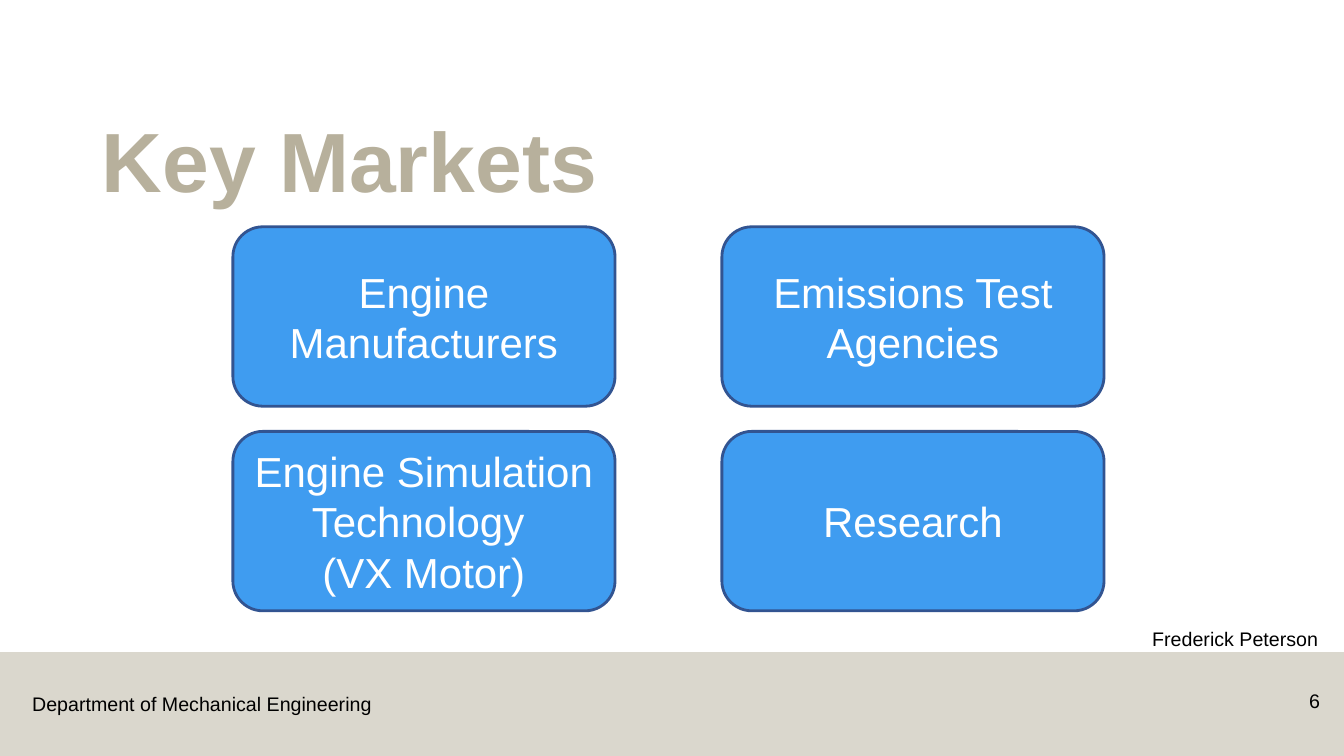
"""Build the Key Markets slide."""
from dataclasses import dataclass

from lxml.etree import SubElement
from pptx import Presentation
from pptx.dml.color import RGBColor
from pptx.enum.shapes import MSO_SHAPE
from pptx.enum.text import MSO_ANCHOR, MSO_AUTO_SIZE, PP_ALIGN
from pptx.oxml.ns import qn
from pptx.slide import Slide
from pptx.text.text import TextFrame
from pptx.util import Inches, Pt


@dataclass(frozen=True)
class Theme:
    font: str = "Arial"
    sand: str = "B7B09C"
    blue: str = "3F9CF0"
    navy: str = "325491"
    white: str = "FFFFFF"
    black: str = "000000"
    title_size: int = 60
    market_size: int = 30
    label_size: int = 14


@dataclass(frozen=True)
class Market:
    lines: tuple[str, ...]
    column: int
    row: int


@dataclass(frozen=True)
class Label:
    text: str
    left: float
    top: float
    width: float
    height: float
    align: PP_ALIGN = PP_ALIGN.LEFT


THEME = Theme()
MARKETS = (
    Market(("Engine Manufacturers",), 0, 0),
    Market(("Emissions Test Agencies",), 1, 0),
    Market(("Engine Simulation Technology ", "(VX Motor)"), 0, 1),
    Market(("Research",), 1, 1),
)
LABELS = (
    Label("Department of Mechanical Engineering", 0.22, 6.82, 3.59, 0.34),
    Label("6", 12.42, 6.79, 0.77, 0.4, PP_ALIGN.RIGHT),
    Label("Frederick Peterson", 11.33, 6.17, 2, 0.34),
)


def write_lines(tf: TextFrame, lines: tuple[str, ...], size: int, color: str,
                align: PP_ALIGN, bold: bool = False) -> None:
    tf.word_wrap = True
    for i, line in enumerate(lines):
        p = tf.add_paragraph() if i else tf.paragraphs[0]
        p.alignment = align
        r = p.add_run()
        r.text = line
        r.font.name = THEME.font
        r.font.size = Pt(size)
        r.font.bold = bold
        r.font.color.rgb = RGBColor.from_string(color)


def add_footer_band(s: Slide) -> None:
    sp = s.shapes.add_shape(MSO_SHAPE.RECTANGLE, 0, Inches(6.47), Inches(13.33), Inches(1.03))
    sp.shadow.inherit = False
    sp.fill.solid()
    sp.fill.fore_color.rgb = RGBColor.from_string(THEME.sand)
    sp.line.fill.background()
    color = sp._element.spPr.find(qn("a:solidFill")).find(qn("a:srgbClr"))
    SubElement(color, qn("a:alpha"), val="50000")


def add_title(s: Slide, text: str) -> None:
    sp = s.shapes.title
    sp.left, sp.top, sp.width, sp.height = map(Inches, (0.91, 0.75, 11.5, 1.39))
    tf = sp.text_frame
    tf.auto_size = MSO_AUTO_SIZE.NONE
    tf.vertical_anchor = MSO_ANCHOR.BOTTOM
    write_lines(tf, (text,), THEME.title_size, THEME.sand, PP_ALIGN.LEFT, bold=True)
    tf.paragraphs[0].line_spacing = 0.9


def add_market(s: Slide, market: Market) -> None:
    left = 2.31 + market.column * 4.85
    top = 2.25 + market.row * 2.03
    sp = s.shapes.add_shape(MSO_SHAPE.ROUNDED_RECTANGLE, Inches(left), Inches(top),
                            Inches(3.79), Inches(1.78))
    sp.shadow.inherit = False
    sp.fill.solid()
    sp.fill.fore_color.rgb = RGBColor.from_string(THEME.blue)
    sp.line.color.rgb = RGBColor.from_string(THEME.navy)
    sp.line.width = Pt(2)
    sp.text_frame.vertical_anchor = MSO_ANCHOR.MIDDLE
    write_lines(sp.text_frame, market.lines, THEME.market_size, THEME.white, PP_ALIGN.CENTER)


def add_label(s: Slide, label: Label) -> None:
    sp = s.shapes.add_textbox(Inches(label.left), Inches(label.top),
                              Inches(label.width), Inches(label.height))
    write_lines(sp.text_frame, (label.text,), THEME.label_size, THEME.black, label.align)


def main() -> None:
    prs = Presentation()
    prs.slide_width = Inches(13.33)
    prs.slide_height = Inches(7.5)
    s = prs.slides.add_slide(prs.slide_layouts[5])
    add_footer_band(s)
    add_title(s, "Key Markets")
    for market in MARKETS:
        add_market(s, market)
    for label in LABELS:
        add_label(s, label)
    prs.save("out.pptx")


if __name__ == "__main__":
    main()
